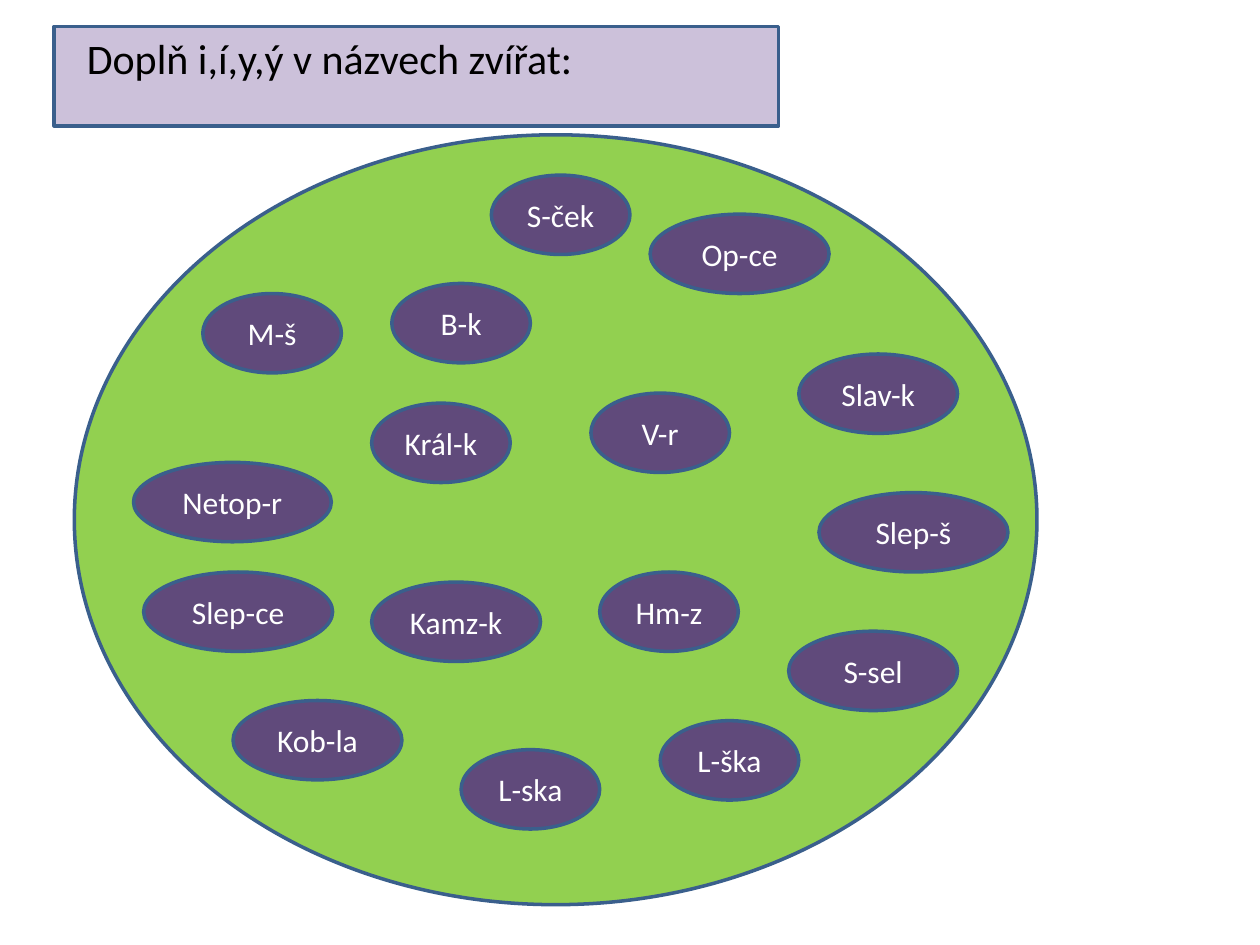
from typing import NamedTuple

from pptx import Presentation
from pptx.dml.color import RGBColor
from pptx.enum.shapes import MSO_SHAPE
from pptx.enum.text import MSO_ANCHOR, MSO_AUTO_SIZE, PP_ALIGN
from pptx.shapes.autoshape import Shape
from pptx.slide import Slide
from pptx.text.text import _Paragraph
from pptx.util import Inches, Pt

CIRCLE = MSO_SHAPE.FLOWCHART_CONNECTOR
RECTANGLE = MSO_SHAPE.RECTANGLE
MIDDLE = MSO_ANCHOR.MIDDLE
CENTER = PP_ALIGN.CENTER
GROW = MSO_AUTO_SIZE.SHAPE_TO_FIT_TEXT

COLORS = {
    "meadow": "92D050",
    "banner": "CCC1DA",
    "animal": "604A7B",
    "outline": "3A5F8C",
    "title": "000000",
    "label": "FFFFFF",
}
FONT = "Calibri"
ANIMAL_HEIGHT = 0.63


class Box(NamedTuple):
    left: float
    top: float
    width: float
    height: float


class Animal(NamedTuple):
    word: str
    left: float
    top: float
    width: float = 1.1


ANIMALS = [
    Animal("M-š", 1.61, 2.33),
    Animal("B-k", 3.11, 2.25),
    Animal("Král-k", 2.95, 3.2),
    Animal("V-r", 4.69, 3.12),
    Animal("S-ček", 3.9, 1.39),
    Animal("Op-ce", 5.16, 1.7, 1.42),
    Animal("Slav-k", 6.34, 2.81, 1.26),
    Animal("Hm-z", 4.76, 4.54),
    Animal("Kamz-k", 2.95, 4.62, 1.34),
    Animal("L-ška", 5.24, 5.72),
    Animal("Netop-r", 1.06, 3.67, 1.57),
    Animal("Slep-š", 6.5, 3.91, 1.5),
    Animal("S-sel", 6.26, 5.01, 1.34),
    Animal("L-ska", 3.66, 5.95),
    Animal("Slep-ce", 1.14, 4.54, 1.5),
    Animal("Kob-la", 1.85, 5.56, 1.34),
]


def color(name: str) -> RGBColor:
    return RGBColor.from_string(COLORS[name])


def add_outlined_shape(slide: Slide, kind: MSO_SHAPE, box: Box, fill: str) -> Shape:
    shape = slide.shapes.add_shape(kind, *map(Inches, box))
    shape.shadow.inherit = False
    shape.fill.solid()
    shape.fill.fore_color.rgb = color(fill)
    shape.line.color.rgb = color("outline")
    shape.line.width = Pt(2)
    return shape


def write(paragraph: _Paragraph, text: str, size: int, font_color: str) -> None:
    paragraph.text = text
    paragraph.font.name = FONT
    paragraph.font.size = Pt(size)
    paragraph.font.color.rgb = color(font_color)


def add_animal(slide: Slide, animal: Animal) -> None:
    box = Box(animal.left, animal.top, animal.width, ANIMAL_HEIGHT)
    frame = add_outlined_shape(slide, CIRCLE, box, "animal").text_frame
    frame.word_wrap = False
    frame.vertical_anchor = MIDDLE
    paragraph = frame.paragraphs[0]
    paragraph.alignment = CENTER
    write(paragraph, animal.word, 18, "label")


def add_title(slide: Slide, text: str, box: Box) -> None:
    frame = slide.shapes.add_textbox(*map(Inches, box)).text_frame
    frame.word_wrap = True
    frame.auto_size = GROW
    write(frame.paragraphs[0], text, 24, "title")


def main() -> None:
    presentation = Presentation()
    presentation.slide_width = Inches(10)
    presentation.slide_height = Inches(7.5)
    slide = presentation.slides.add_slide(presentation.slide_layouts[6])

    add_outlined_shape(slide, CIRCLE, Box(0.59, 1.07, 7.64, 6.11), "meadow")
    add_outlined_shape(slide, RECTANGLE, Box(0.43, 0.21, 5.75, 0.79), "banner")
    for animal in ANIMALS:
        add_animal(slide, animal)
    add_title(slide, "Doplň i,í,y,ý v názvech zvířat:", Box(0.59, 0.21, 4.88, 0.5))

    presentation.save("out.pptx")


if __name__ == "__main__":
    main()
